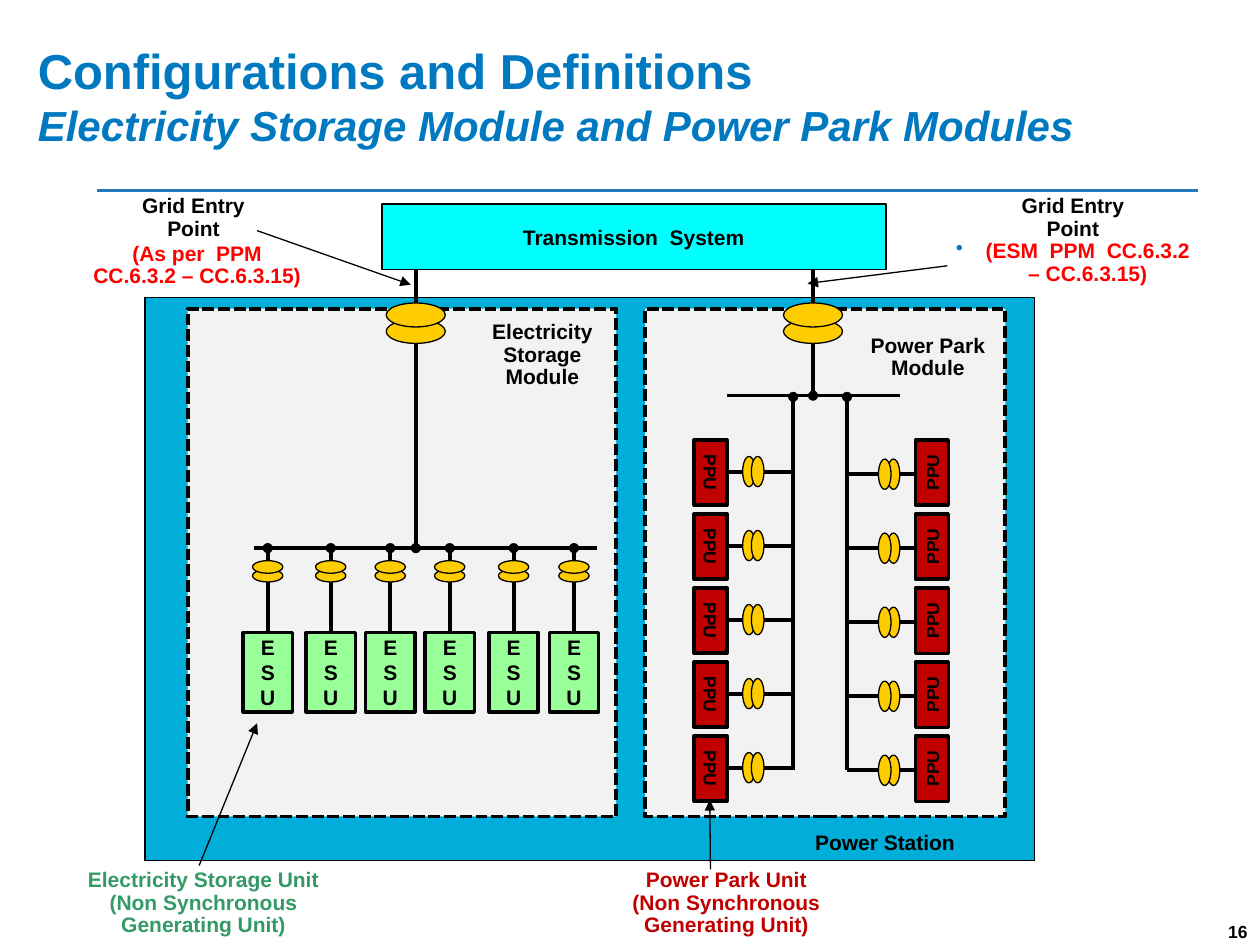
from lxml import etree
from pptx import Presentation
from pptx import util as u
from pptx.dml.color import RGBColor
from pptx.enum import dml, shapes, text
from pptx.oxml import ns

THEME = {
    "font": "Arial",
    "title": "0079C1", "rule": "2478C0", "ink": "000000", "alert": "FF0000",
    "station": "00AED9", "module": "F2F2F2", "grid": "00FFFF", "coil": "FFCC00",
    "storage": "99FF99", "storage_text": "339966", "park": "C00000",
    "title_size": 28, "subtitle_size": 24, "label_size": 12, "small_size": 10,
}
RECT, OVAL = shapes.MSO_SHAPE.RECTANGLE, shapes.MSO_SHAPE.OVAL
LEFT, CENTER, RIGHT = text.PP_ALIGN.LEFT, text.PP_ALIGN.CENTER, text.PP_ALIGN.RIGHT

deck = Presentation()
deck.slide_width, deck.slide_height = u.Pt(720), u.Pt(540)
slide = deck.slides.add_slide(deck.slide_layouts[5])


def write(frame, lines, align=CENTER, spacing=1.0, inset=None, anchor=text.MSO_ANCHOR.TOP):
    """Fill a text frame with (text, colour, size[, font overrides]) lines."""
    settings = {"word_wrap": True, "auto_size": text.MSO_AUTO_SIZE.NONE, "vertical_anchor": anchor}
    if inset is not None:
        for side in ("left", "top", "right", "bottom"):
            settings["margin_" + side] = u.Pt(inset)
    for name, value in settings.items():
        setattr(frame, name, value)
    for i, (words, color, size, *extra) in enumerate(lines):
        paragraph = frame.paragraphs[0] if i == 0 else frame.add_paragraph()
        paragraph.alignment, paragraph.line_spacing = align, spacing
        paragraph.space_before = u.Pt(0)
        run = paragraph.add_run()
        run.text = words
        font = {"name": THEME["font"], "size": u.Pt(THEME[size]), "bold": True}
        for override in extra:
            font.update(override)
        for name, value in font.items():
            setattr(run.font, name, value)
        run.font.color.rgb = RGBColor.from_string(THEME[color])


def draw(kind, x, y, width, height, fill, weight=0.75):
    """Add a filled, outlined shape centred on (x, y)."""
    shape = slide.shapes.add_shape(
        kind, u.Pt(x - width / 2), u.Pt(y - height / 2), u.Pt(width), u.Pt(height))
    shape.shadow.inherit = False
    shape.fill.solid()
    shape.fill.fore_color.rgb = RGBColor.from_string(THEME[fill])
    if weight:
        shape.line.color.rgb = RGBColor.from_string(THEME["ink"])
        shape.line.width = u.Pt(weight)
    else:
        shape.line.fill.background()
    return shape


# Title
title = slide.shapes.title
title.left, title.top, title.width, title.height = u.Pt(14.4), u.Pt(19.4), u.Pt(676.8), u.Pt(70.6)
write(title.text_frame, [
    ("Configurations and Definitions", "title", "title_size"),
    ("Electricity Storage Module and Power Park Modules", "title", "subtitle_size", {"italic": True}),
], align=LEFT)

# Power station with its two modules
draw(RECT, 337, 330.8, 508.3, 321.8, "station")
for x, width in ((471.6, 205.9), (229.7, 244.8)):
    module = draw(RECT, x, 321.5, width, 290.2, "module", 2.25)
    module.line.dash_style = dml.MSO_LINE.SQUARE_DOT

transmission = draw(RECT, 362.2, 135.4, 288, 37.4, "grid", 1)
write(transmission.text_frame, [("Transmission  System", "ink", "label_size")],
      anchor=text.MSO_ANCHOR.MIDDLE)

# Wires are (x1, y1, x2, y2, weight, joined unit)
storage_x, storage_bus_y = 237.6, 313.2
park_x, park_bus_y = 464.6, 226.1
wires = [
    (341.3, storage_bus_y, 145.4, storage_bus_y, 2.25, None),
    (storage_x, storage_bus_y, storage_x, 154, 2.25, None),
    (415.4, park_bus_y, 514.1, park_bus_y, 2, None),
    (park_x, park_bus_y, park_x, 154, 2, None),
]
dots = [(storage_x, storage_bus_y), (park_x, park_bus_y)]
# Transformer coils are (x, y, width, height), the second of a pair in front
coils = [(x, y, 33.8, 13.7) for x in (storage_x, park_x) for y in (189.4, 180)]

# Storage units under their busbar
for x in (153, 189, 223, 257, 293.5, 328):
    unit = draw(RECT, x, 384.1, 28.1, 45.4, "storage", 2)
    write(unit.text_frame, [("ESU", "ink", "label_size")], anchor=text.MSO_ANCHOR.MIDDLE)
    wires.append((x, storage_bus_y, x, 361.4, 2.25, unit))
    dots.append((x, storage_bus_y))
    coils += [(x, y, 17.3, 7.2) for y in (329, 324)]

# Power park units along two feeders; direction points from units to feeder
for unit_x, feeder_x, direction, rotation, drop in (
        (406, 453.2, 1, 90, -0.5), (532.6, 484, -1, 270, 1)):
    wires.append((feeder_x, 440, feeder_x, park_bus_y, 2, None))
    dots.append((feeder_x, park_bus_y + 0.7))
    for row in range(5):
        y = 270 + 42.3 * row
        unit = draw(RECT, unit_x, y, 37.4, 18.7, "park", 2)
        unit.rotation = rotation
        write(unit.text_frame, [("PPU", "ink", "small_size")], anchor=text.MSO_ANCHOR.MIDDLE)
        wires.append((feeder_x, y + drop, unit_x + 9.4 * direction, y + drop, 2.25, None))
        coils += [(unit_x + reach * direction, y + drop, 7.2, 17.3) for reach in (22, 27)]

callouts = [
    (113.8, 494.6, 146.9, 413.3), (406, 496.8, 405.6, 457.2),
    (146.9, 131.8, 234.7, 162.7), (541.4, 151.9, 461.5, 162),
]
rule = (55.4, 108.7, 684.7, 108.7)
strokes = [(*rule, 1.5, None, "rule", False)]
strokes += [(*wire, "ink", False) for wire in wires]
strokes += [(*callout, 0.75, None, "ink", True) for callout in callouts]
for x1, y1, x2, y2, weight, unit, color, arrow in strokes:
    stroke = slide.shapes.add_connector(
        shapes.MSO_CONNECTOR.STRAIGHT, u.Pt(x1), u.Pt(y1), u.Pt(x2), u.Pt(y2))
    if unit is not None:
        stroke.end_connect(unit, 0)
    stroke.line.color.rgb = RGBColor.from_string(THEME[color])
    stroke.line.width = u.Pt(weight)
    if arrow:
        etree.SubElement(stroke.line._get_or_add_ln(), ns.qn("a:tailEnd"), type="triangle")
    etree.SubElement(stroke._element.spPr, ns.qn("a:effectLst"))

for x, y in dots:
    draw(OVAL, x, y, 5.8, 5.8, "ink", 0)
for coil in coils:
    draw(OVAL, *coil, "coil")

# Labels are (left, top, width, height, inset, lines)
labels = [
    (43.9, 496.8, 144.7, 43.2, 0, [
        ("Electricity Storage Unit", "storage_text"),
        ("(Non Synchronous Generating Unit)", "storage_text")]),
    (342.7, 496.8, 144.7, 43.2, 0, [
        ("Power Park Unit", "park"), ("(Non Synchronous Generating Unit)", "park")]),
    (433.4, 475.9, 144.7, 15.1, 0, [("Power Station", "ink")]),
    (263.5, 183.6, 92.9, 43.2, 0, [
        ("Electricity", "ink"), ("Storage", "ink"), ("Module", "ink")]),
    (483.8, 191.5, 92.9, 25.9, 0, [("Power Park Module", "ink")]),
    (59.8, 111.6, 101.5, 30.2, 0, [("Grid Entry", "ink"), ("Point", "ink")]),
    (18.7, 135.4, 187.9, 33.1, None, [
        ("(As per  PPM", "alert"), ("CC.6.3.2 – CC.6.3.15)", "alert")]),
    (542.2, 111.6, 141.8, 52.6, 0, [
        ("Grid Entry", "ink"), ("Point", "ink"),
        ("(ESM  PPM  CC.6.3.2 – CC.6.3.15)", "alert")]),
]
for left, top, width, height, inset, lines in labels:
    label = slide.shapes.add_textbox(u.Pt(left), u.Pt(top), u.Pt(width), u.Pt(height))
    write(label.text_frame, [(*line, "label_size") for line in lines], spacing=0.9, inset=inset)

# The last label ends in a bulleted reference
reference = label.text_frame.paragraphs[-1]._p.get_or_add_pPr()
reference.set("marL", str(u.Pt(17)))
reference.set("indent", str(u.Pt(-17)))
bullet_color = etree.SubElement(reference, ns.qn("a:buClr"))
etree.SubElement(bullet_color, ns.qn("a:srgbClr"), val=THEME["title"])
etree.SubElement(reference, ns.qn("a:buChar"), char="•")

page_number = slide.shapes.add_textbox(u.Pt(681.1), u.Pt(522.7), u.Pt(38.9), u.Pt(17.3))
write(page_number.text_frame, [("16", "ink", "small_size")], align=RIGHT)

deck.save("out.pptx")
